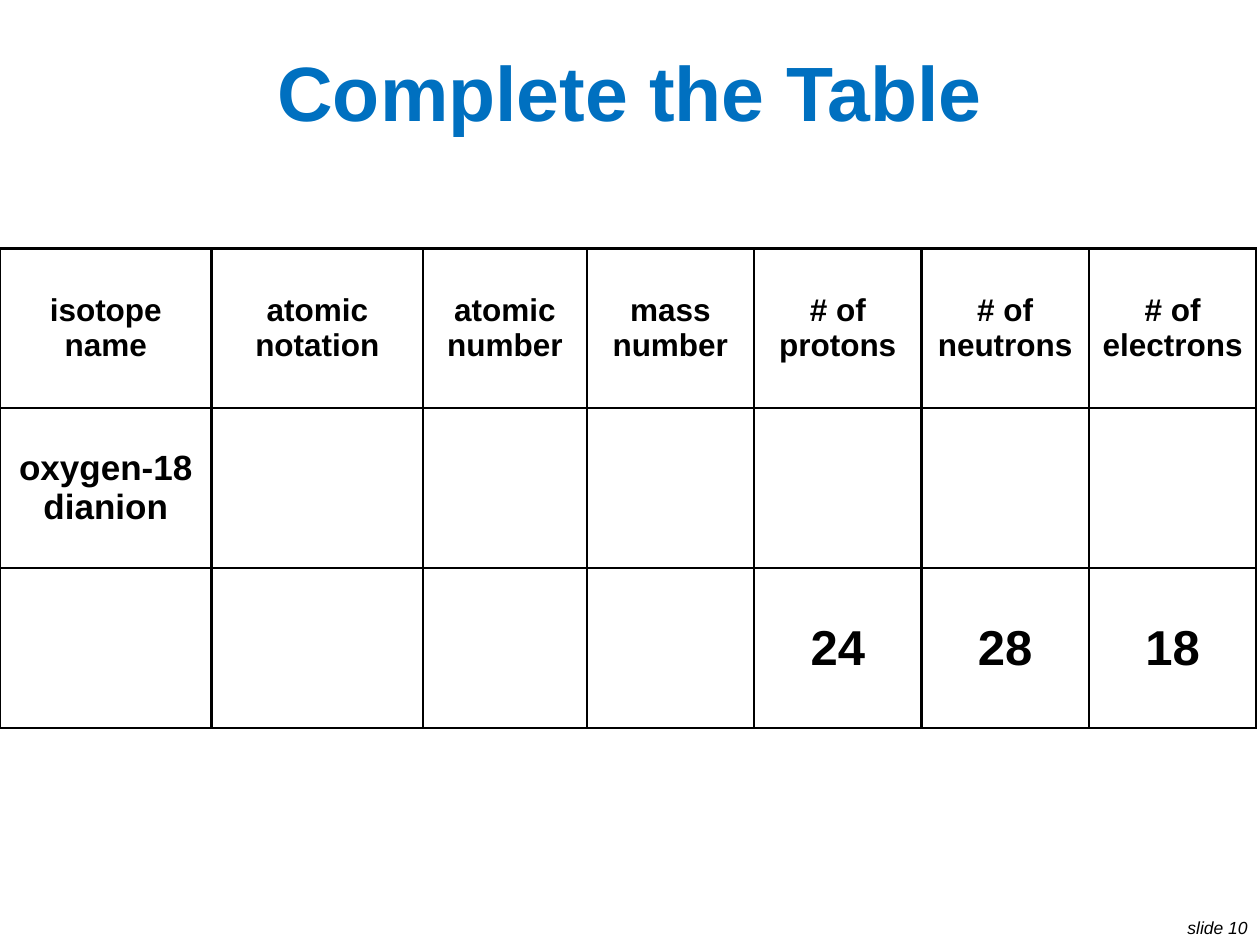
from lxml import etree
from pptx import Presentation
from pptx.dml.color import RGBColor
from pptx.enum.text import MSO_ANCHOR, MSO_AUTO_SIZE, PP_ALIGN
from pptx.oxml.ns import qn
from pptx.util import Pt

CENTER, RIGHT = PP_ALIGN.CENTER, PP_ALIGN.RIGHT
MIDDLE = MSO_ANCHOR.MIDDLE
FIT_SHAPE = MSO_AUTO_SIZE.SHAPE_TO_FIT_TEXT
TITLE_ONLY = 5
FONT = "Arial"
COLORS = {"title": "0070C0", "text": "000000", "border": "000000", "paper": "FFFFFF"}

COLUMN_WIDTHS = [121, 121, 93.5, 95.75, 95.75, 95.75, 95.75]
ROW_SIZES = [18, 20, 28]
ISOTOPE_ROWS = [
    ["isotope name", "atomic notation", "atomic number", "mass number",
     "# of protons", "# of neutrons", "# of electrons"],
    ["oxygen-18 dianion", "", "", "", "", "", ""],
    ["", "", "", "", "24", "28", "18"],
]


def write(frame, text, size, color, align, bold=False, italic=False):
    """Write one formatted run into the first paragraph of a text frame."""
    paragraph = frame.paragraphs[0]
    paragraph.alignment = align
    run = paragraph.add_run()
    run.text = text
    run.font.name = FONT
    run.font.size = Pt(size)
    run.font.bold = bold
    run.font.italic = italic
    run.font.color.rgb = RGBColor.from_string(COLORS[color])


def set_borders(cell, width):
    """Draw a solid line on all four sides of a table cell."""
    properties = cell._tc.get_or_add_tcPr()
    for position, side in enumerate(("a:lnL", "a:lnR", "a:lnT", "a:lnB")):
        line = etree.Element(qn(side), w=str(Pt(width)))
        fill = etree.SubElement(line, qn("a:solidFill"))
        etree.SubElement(fill, qn("a:srgbClr"), val=COLORS["border"])
        properties.insert(position, line)


def place_title(slide, left, top, width, height):
    """Place the heading in the title placeholder."""
    title = slide.shapes.title
    title.left, title.top = Pt(left), Pt(top)
    title.width, title.height = Pt(width), Pt(height)
    title.text_frame.vertical_anchor = MIDDLE
    write(title.text_frame, "Complete the Table", 44, "title", CENTER, bold=True)


def place_isotope_table(slide, left, top, width, height):
    """Place the isotope table, scaling its columns to the given width."""
    isotopes = slide.shapes.add_table(
        len(ISOTOPE_ROWS), len(COLUMN_WIDTHS),
        Pt(left), Pt(top), Pt(width), Pt(height)).table
    scale = width / sum(COLUMN_WIDTHS)
    for column, column_width in zip(isotopes.columns, COLUMN_WIDTHS):
        column.width = Pt(column_width * scale)
    for row, entries, size in zip(isotopes.rows, ISOTOPE_ROWS, ROW_SIZES):
        row.height = Pt(height / len(ISOTOPE_ROWS))
        for cell, entry in zip(row.cells, entries):
            cell.fill.solid()
            cell.fill.fore_color.rgb = RGBColor.from_string(COLORS["paper"])
            set_borders(cell, 1.5)
            cell.vertical_anchor = MIDDLE
            cell.margin_left = cell.margin_right = Pt(5)
            cell.margin_top = cell.margin_bottom = Pt(0)
            if entry:
                write(cell.text_frame, entry, size, "text", CENTER, bold=True)


def place_slide_number(slide, left, top, width, height):
    """Place the slide number label in the corner."""
    label = slide.shapes.add_textbox(Pt(left), Pt(top), Pt(width), Pt(height))
    label.text_frame.word_wrap = False
    label.text_frame.auto_size = FIT_SHAPE
    write(label.text_frame, "slide 10", 10, "text", RIGHT, italic=True)


def main():
    """Build and save the slide."""
    deck = Presentation()
    deck.slide_width, deck.slide_height = Pt(720), Pt(540)
    slide = deck.slides.add_slide(deck.slide_layouts[TITLE_ONLY])
    place_slide_number(slide, 669.6, 520.6, 50.4, 19.4)
    place_isotope_table(slide, 0, 142, 718, 274)
    place_title(slide, 36, 21.6, 648, 60.5)
    deck.save("out.pptx")


if __name__ == "__main__":
    main()
